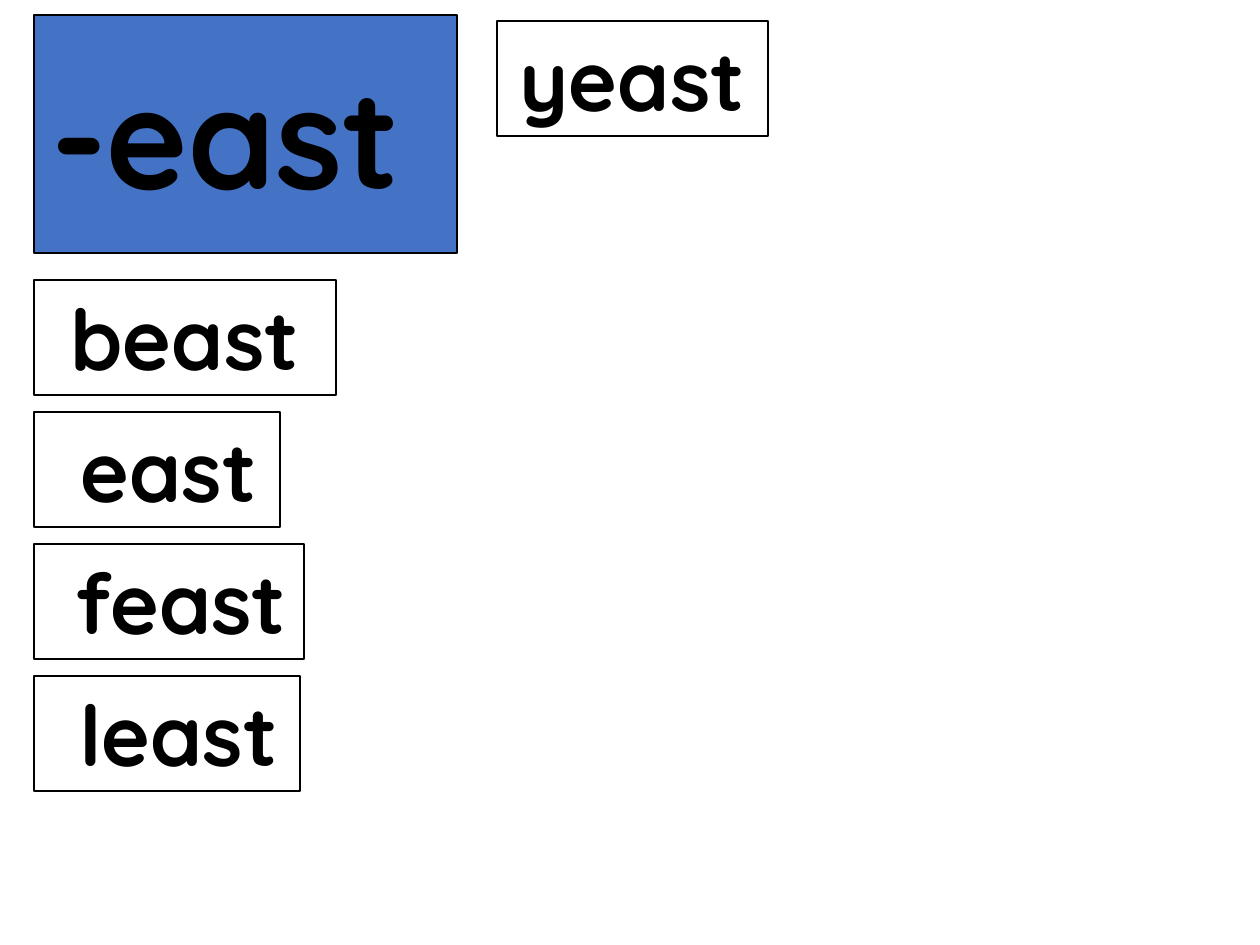
import dataclasses

import pptx
import pptx.dml.color
import pptx.enum.shapes
import pptx.enum.text
import pptx.util

PX = pptx.util.Inches(1) / 126
FONT = "Quicksand"
BLACK, WHITE, BLUE = "000000", "FFFFFF", "4472C4"
LEFT, FIRST_TOP, ROW_STEP, CARD_HEIGHT = 34, 280, 132, 115


@dataclasses.dataclass(frozen=True)
class Card:
    text: str
    left: int
    top: int
    width: int


def px(length: int) -> pptx.util.Emu:
    return pptx.util.Emu(round(length * PX))


def color(value: str) -> pptx.dml.color.RGBColor:
    return pptx.dml.color.RGBColor.from_string(value)


def style_box(shape, text: str, fill: str, size: int) -> None:
    shape.fill.solid()
    shape.fill.fore_color.rgb = color(fill)
    shape.line.color.rgb = color(BLACK)
    shape.line.width = pptx.util.Pt(1)
    shape.text_frame.text = text
    paragraph = shape.text_frame.paragraphs[0]
    paragraph.alignment = pptx.enum.text.PP_ALIGN.CENTER
    font = paragraph.runs[0].font
    font.name = FONT
    font.size = pptx.util.Pt(size)
    font.bold = True
    font.color.rgb = color(BLACK)


def add_heading(slide, text: str) -> None:
    title = slide.shapes.title
    title.left, title.top = px(LEFT), px(15)
    title.width, title.height = px(423), px(238)
    style_box(title, text, BLUE, 80)
    title.text_frame.auto_size = pptx.enum.text.MSO_AUTO_SIZE.NONE
    title.text_frame.vertical_anchor = pptx.enum.text.MSO_ANCHOR.MIDDLE


def add_card(slide, card: Card) -> None:
    shape = slide.shapes.add_shape(
        pptx.enum.shapes.MSO_SHAPE.RECTANGLE,
        px(card.left), px(card.top), px(card.width), px(CARD_HEIGHT),
    )
    shape.shadow.inherit = False
    style_box(shape, card.text, WHITE, 48)
    frame = shape.text_frame
    frame.word_wrap = False
    frame.auto_size = pptx.enum.text.MSO_AUTO_SIZE.SHAPE_TO_FIT_TEXT
    frame.vertical_anchor = pptx.enum.text.MSO_ANCHOR.TOP


def main() -> None:
    presentation = pptx.Presentation()
    presentation.slide_width = px(1260)
    presentation.slide_height = px(945)
    slide = presentation.slides.add_slide(presentation.slide_layouts[5])
    add_heading(slide, "-east ")
    words = [(" beast ", 302), (" east ", 246), (" feast ", 270), (" least ", 266)]
    for row, (text, width) in enumerate(words):
        add_card(slide, Card(text, LEFT, FIRST_TOP + row * ROW_STEP, width))
    add_card(slide, Card("yeast", 497, 21, 271))
    presentation.save("out.pptx")


if __name__ == "__main__":
    main()
